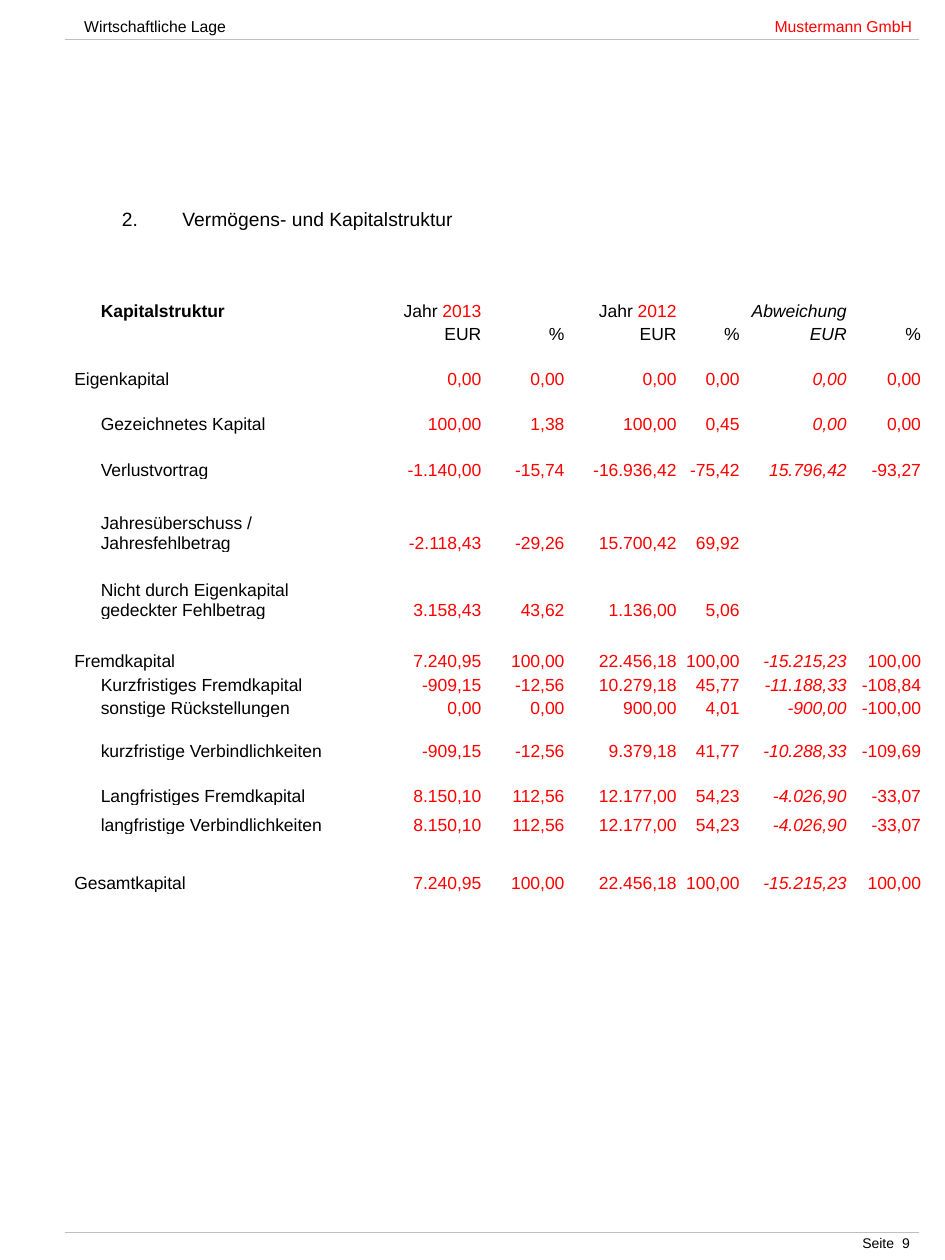
import dataclasses

import lxml.etree
import pptx
import pptx.dml.color
import pptx.enum.shapes
import pptx.enum.text
import pptx.oxml
import pptx.oxml.ns
import pptx.util

Inches = pptx.util.Inches
Align = pptx.enum.text.PP_ALIGN
Anchor = pptx.enum.text.MSO_ANCHOR
qn = pptx.oxml.ns.qn


@dataclasses.dataclass(frozen=True)
class Theme:
    font: str = "Arial"
    ink: str = "000000"
    variable: str = "FF0000"
    rule: str = "BFBFBF"
    heading: int = 11
    body: int = 10
    header: int = 9
    footer: int = 8
    hairline: float = 0.1


COLUMNS = [0.21, 2.02, 0.13, 0.89, 0.66, 0.89, 0.5, 0.85, 0.59]
FIRST_VALUE = 3
DEVIATION = 7
ROW = 0.18
GAP = (ROW, "", "")
MAIN_ITEMS = {"Eigenkapital", "Fremdkapital", "Gesamtkapital"}
HEADINGS = [
    (ROW, "Kapitalstruktur", "Jahr 2013||Jahr 2012||Abweichung|"),
    (ROW, "", "EUR|%|EUR|%|EUR|%"),
]
BALANCE = [
    GAP,
    (ROW, "Eigenkapital", "0,00|0,00|0,00|0,00|0,00|0,00"),
    GAP,
    (ROW, "Gezeichnetes Kapital", "100,00|1,38|100,00|0,45|0,00|0,00"),
    GAP,
    (ROW, "Verlustvortrag", "-1.140,00|-15,74|-16.936,42|-75,42|15.796,42|-93,27"),
    GAP,
    (0.4, "Jahresüberschuss / Jahresfehlbetrag", "-2.118,43|-29,26|15.700,42|69,92"),
    GAP,
    (0.35, "Nicht durch Eigenkapital gedeckter Fehlbetrag", "3.158,43|43,62|1.136,00|5,06"),
    GAP,
    (0.23, "Fremdkapital", "7.240,95|100,00|22.456,18|100,00|-15.215,23|100,00"),
    (0.19, "Kurzfristiges Fremdkapital", "-909,15|-12,56|10.279,18|45,77|-11.188,33|-108,84"),
    (ROW, "sonstige Rückstellungen", "0,00|0,00|900,00|4,01|-900,00|-100,00"),
    (0.34, "kurzfristige Verbindlichkeiten", "-909,15|-12,56|9.379,18|41,77|-10.288,33|-109,69"),
    GAP,
    (ROW, "Langfristiges Fremdkapital", "8.150,10|112,56|12.177,00|54,23|-4.026,90|-33,07"),
    (0.23, "langfristige Verbindlichkeiten", "8.150,10|112,56|12.177,00|54,23|-4.026,90|-33,07"),
    (0.23, "", ""),
    (0.23, "Gesamtkapital", "7.240,95|100,00|22.456,18|100,00|-15.215,23|100,00"),
]


class Report:
    """Holds the theme and the current slide and draws each kind of element."""

    def __init__(self, slide, theme):
        self.slide = slide
        self.theme = theme

    def add_runs(self, paragraph, parts, size, bold=False, italic=False):
        for wording, color in parts:
            run = paragraph.add_run()
            run.text = wording
            run.font.name = self.theme.font
            run.font.size = pptx.util.Pt(size)
            run.font.bold = bold
            run.font.italic = italic
            run.font.color.rgb = pptx.dml.color.RGBColor.from_string(color)

    def rule(self, y):
        line = self.slide.shapes.add_connector(
            pptx.enum.shapes.MSO_CONNECTOR.STRAIGHT, Inches(0.52), Inches(y), Inches(7.29), Inches(y))
        line.line.width = pptx.util.Pt(self.theme.hairline)
        line.line.color.rgb = pptx.dml.color.RGBColor.from_string(self.theme.rule)
        lxml.etree.SubElement(line._element.spPr, qn("a:effectLst"))

    def text(self, box, parts, size, anchor=Anchor.TOP, align=Align.LEFT):
        frame = self.slide.shapes.add_textbox(*map(Inches, box)).text_frame
        frame.word_wrap = True
        frame.vertical_anchor = anchor
        paragraph = frame.paragraphs[0]
        paragraph.alignment = align
        self.add_runs(paragraph, parts, size)
        return paragraph

    def right_tab(self, paragraph, position):
        tabs = lxml.etree.SubElement(paragraph._p.get_or_add_pPr(), qn("a:tabLst"))
        lxml.etree.SubElement(tabs, qn("a:tab"), pos=str(Inches(position)), algn="r")

    def number(self, paragraph, start, indent, hanging):
        paragraph.line_spacing = pptx.util.Pt(15)
        properties = paragraph._p.get_or_add_pPr()
        properties.set("marL", str(Inches(indent)))
        properties.set("indent", str(-Inches(hanging)))
        lxml.etree.SubElement(properties, qn("a:buFont"), typeface=self.theme.font)
        lxml.etree.SubElement(properties, qn("a:buAutoNum"), type="arabicPeriod", startAt=str(start))

    def cell(self, cell, parts=(), bold=False, italic=False, align=Align.LEFT):
        cell.fill.background()
        cell.margin_left = cell.margin_right = cell.margin_top = Inches(0.01)
        cell.margin_bottom = 0
        cell.vertical_anchor = Anchor.BOTTOM
        paragraph = cell.text_frame.paragraphs[0]
        paragraph.alignment = align
        self.add_runs(paragraph, parts, self.theme.body, bold, italic)
        if not parts:
            lxml.etree.SubElement(paragraph._p, qn("a:endParaRPr"), sz=str(self.theme.body * 100))

    def heading_parts(self, wording):
        word, space, year = wording.partition(" ")
        parts = [(word + space, self.theme.ink), (year, self.theme.variable)]
        return [part for part in parts if part[0]]

    def table(self, left, top):
        rows = [GAP, *HEADINGS, *BALANCE]
        heights = [height for height, _, _ in rows]
        table = self.slide.shapes.add_table(
            len(rows), len(COLUMNS), Inches(left), Inches(top),
            Inches(sum(COLUMNS)), Inches(sum(heights))).table
        table.first_row = table.horz_banding = False
        for column, width in zip(table.columns, COLUMNS):
            column.width = Inches(width)
        for r, (height, label, values) in enumerate(rows):
            table.rows[r].height = Inches(height)
            heading = rows[r] in HEADINGS
            label_column = 0 if label in MAIN_ITEMS else 1
            figures = dict(enumerate(values.split("|"), FIRST_VALUE))
            for c in range(len(COLUMNS)):
                cell = table.cell(r, c)
                if c == label_column and label:
                    self.cell(cell, [(label, self.theme.ink)], bold=heading)
                elif figures.get(c):
                    parts = self.heading_parts(figures[c]) if heading else [(figures[c], self.theme.variable)]
                    self.cell(cell, parts, italic=c == DEVIATION, align=Align.RIGHT)
                else:
                    self.cell(cell)
            if label in MAIN_ITEMS:
                table.cell(r, 0).merge(table.cell(r, 1))


def main():
    deck = pptx.Presentation()
    deck.slide_width, deck.slide_height = Inches(7.5), Inches(10)
    theme = Theme()
    report = Report(deck.slides.add_slide(deck.slide_layouts[6]), theme)

    report.rule(0.31)
    header = report.text((0.57, 0.08, 6.93, 0.25),
                         [("Wirtschaftliche Lage\t", theme.ink), ("Mustermann GmbH", theme.variable)],
                         theme.header)
    report.right_tab(header, 6.57)
    report.rule(9.78)
    section = report.text((0.47, 1.02, 6.93, 0.86), [("Vermögens- und Kapitalstruktur", theme.ink)],
                          theme.heading, Anchor.BOTTOM)
    report.number(section, start=2, indent=0.88, hanging=0.48)
    report.text((0.44, 9.73, 6.88, 0.27), [("Seite  9", theme.ink)], theme.footer,
                Anchor.MIDDLE, Align.RIGHT)
    report.table(0.58, 2.19)
    deck.save("out.pptx")


if __name__ == "__main__":
    main()
